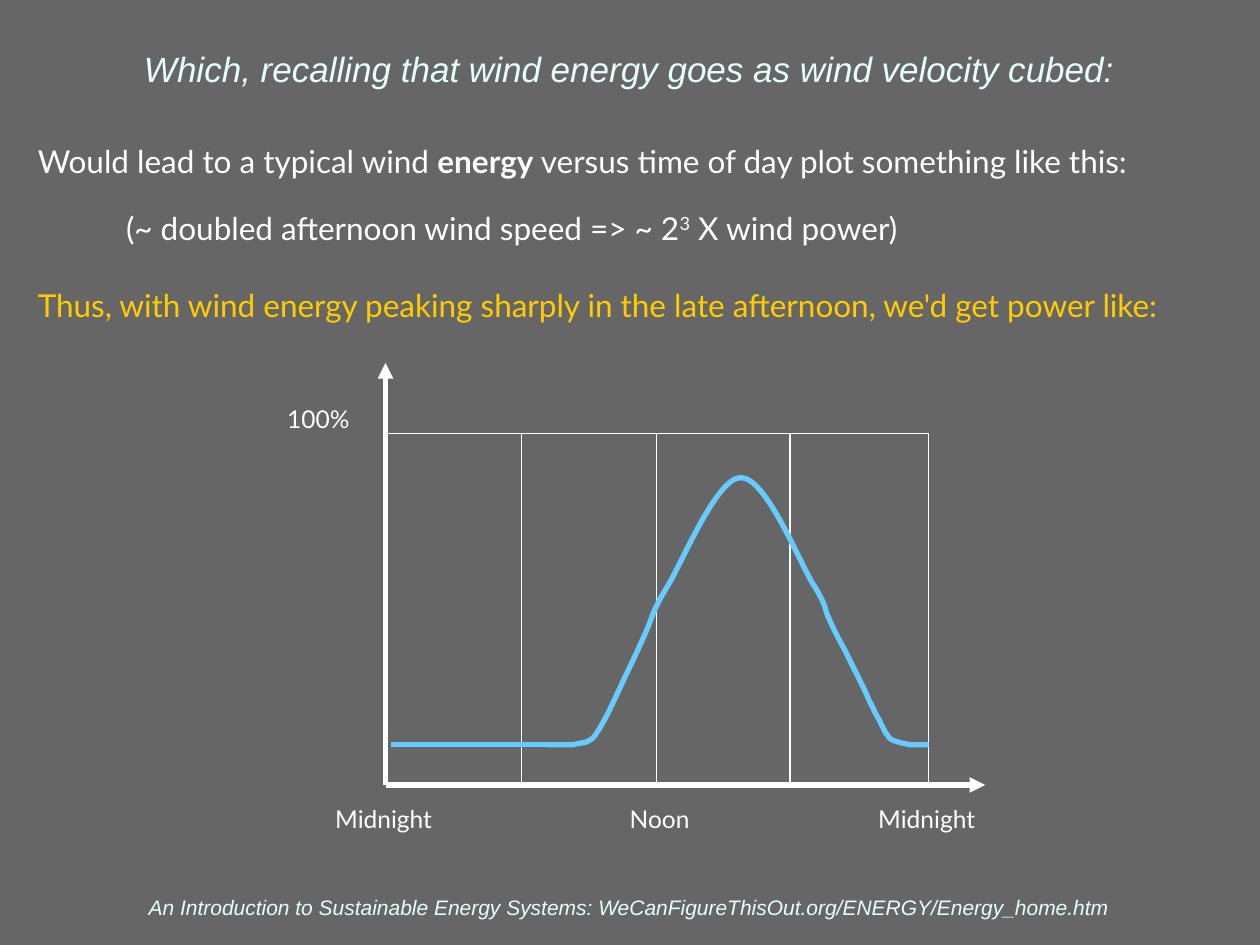
"""Build the slide that plots typical wind energy against time of day."""
from lxml import etree
from pptx import Presentation
from pptx.dml.color import RGBColor
from pptx.enum.shapes import MSO_CONNECTOR
from pptx.enum.text import MSO_ANCHOR, PP_ALIGN
from pptx.oxml.ns import qn
from pptx.util import Inches, Pt

LINE = MSO_CONNECTOR.STRAIGHT
LEFT, CENTER = PP_ALIGN.LEFT, PP_ALIGN.CENTER
TOP, MIDDLE, BOTTOM = MSO_ANCHOR.TOP, MSO_ANCHOR.MIDDLE, MSO_ANCHOR.BOTTOM

THEME = {
    "back": "666666", "pale": "E5FFFF", "white": "FFFFFF",
    "gold": "FFCC00", "blue": "66CCFF",
    "head": "Arial", "body": "Lato",
    "title": 20, "text": 18, "label": 14, "foot": 12,
    "thick": 3, "thin": 1,
}

TITLE = "Which, recalling that wind energy goes as wind velocity cubed:"
FOOT = ("An Introduction to Sustainable Energy Systems: "
        "WeCanFigureThisOut.org/ENERGY/Energy_home.htm")
BODY = [
    {"color": "white", "before": 0, "indent": 0, "runs": [
        ("Would lead to a typical wind ", ""), ("energy", "bold"),
        (" versus time of day plot something like this:", "")]},
    {"color": "white", "before": 16.4, "indent": 0.7, "runs": [
        ("(~ doubled afternoon wind speed => ~ 2", ""), ("3", "super"),
        (" X wind power)", "")]},
    {"color": "gold", "before": 22.4, "indent": 0, "runs": [
        ("Thus, with wind energy peaking sharply in the late afternoon, "
         "we'd get power like:", "")]},
]
LABELS = [
    ("100%", (2.23, 3.16, 0.9, 0.34), LEFT),
    (" Midnight", (2.43, 6.33, 1.18, 0.34), CENTER),
    (" Noon", (4.62, 6.33, 1.18, 0.34), CENTER),
    (" Midnight", (6.74, 6.33, 1.18, 0.34), CENTER),
]
PLOT = {"left": 3.06, "right": 7.37, "full": 3.44, "base": 6.23,
        "tip_x": 7.82, "tip_y": 2.88}
GRID = [4.14, 5.21, 6.27, 7.37]
CALM = (3.1, 5.91, 4.44, 5.91)
START, LEAD = (4.34, 5.91), (4.47, 5.91)
CURVE = [
    (4.51, 5.91, 4.52, 5.91, 4.55, 5.91),
    (4.58, 5.9, 4.61, 5.9, 4.65, 5.89), (4.68, 5.87, 4.7, 5.88, 4.74, 5.81),
    (4.79, 5.74, 4.86, 5.59, 4.92, 5.46), (4.98, 5.33, 5.06, 5.17, 5.12, 5.03),
    (5.18, 4.9, 5.17, 4.86, 5.3, 4.65), (5.42, 4.45, 5.69, 3.79, 5.88, 3.79),
    (6.08, 3.79, 6.34, 4.45, 6.45, 4.63), (6.57, 4.82, 6.54, 4.83, 6.58, 4.91),
    (6.62, 5, 6.65, 5.06, 6.7, 5.15), (6.74, 5.23, 6.8, 5.35, 6.84, 5.43),
    (6.88, 5.51, 6.9, 5.57, 6.93, 5.62), (6.95, 5.68, 6.98, 5.7, 6.99, 5.74),
    (7.01, 5.77, 7.02, 5.81, 7.04, 5.83), (7.06, 5.86, 7.07, 5.87, 7.1, 5.88),
    (7.13, 5.89, 7.17, 5.9, 7.22, 5.91), (7.27, 5.91, 7.37, 5.91, 7.37, 5.91),
]


def color(name):
    return RGBColor.from_string(THEME[name])


def set_frame(shape, anchor):
    frame = shape.text_frame
    frame.word_wrap = True
    frame.vertical_anchor = anchor
    frame.margin_left = frame.margin_right = Inches(0.05)
    frame.margin_top = frame.margin_bottom = Inches(0.05)
    return frame


def add_run(para, text, size, tint, face, style=""):
    run = para.add_run()
    run.text = text
    font = run.font
    font.name, font.size = THEME[face], Pt(THEME[size])
    font.color.rgb = color(tint)
    font.bold, font.italic = style == "bold", style == "italic"
    if style == "super":
        run._r.get_or_add_rPr().set("baseline", "30000")


def add_box(slide, box, anchor=TOP):
    shape = slide.shapes.add_textbox(*map(Inches, box))
    return set_frame(shape, anchor)


def add_line(slide, ends, width="thin", tint="white", arrow=False):
    line = slide.shapes.add_connector(LINE, *map(Inches, ends))
    line.line.color.rgb = color(tint)
    line.line.width = Pt(THEME[width])
    if arrow:
        etree.SubElement(line.line._get_or_add_ln(), qn("a:tailEnd"), type="triangle")
    etree.SubElement(line._element.spPr, qn("a:effectLst"))


def add_curve(slide):
    form = slide.shapes.build_freeform(*map(Inches, START))
    ends = [LEAD] + [bend[4:] for bend in CURVE]
    form.add_line_segments([tuple(map(Inches, end)) for end in ends], close=False)
    curve = form.convert_to_shape()
    lines = list(curve._element.iter(qn("a:lnTo")))
    for line, bend in zip(lines[1:], CURVE):
        line.tag = qn("a:cubicBezTo")
        line.clear()
        for x, y in zip(bend[::2], bend[1::2]):
            etree.SubElement(line, qn("a:pt"), x=str(Inches(x) - curve.left),
                             y=str(Inches(y) - curve.top))
    curve.shadow.inherit = False
    curve.fill.background()
    curve.line.color.rgb = color("blue")
    curve.line.width = Pt(THEME["thick"])


def add_text(slide):
    title = slide.shapes.title
    title.left, title.top, title.width, title.height = map(Inches, (0.33, 0.08, 9.33, 0.92))
    foot = add_box(slide, (0.33, 7.06, 9.33, 0.29), BOTTOM)
    for frame, text, size in ((set_frame(title, MIDDLE), TITLE, "title"), (foot, FOOT, "foot")):
        para = frame.paragraphs[0]
        para.alignment = CENTER
        add_run(para, text, size, "pale", "head", "italic")
    frame = add_box(slide, (0.25, 1.08, 9.75, 1.72))
    for i, item in enumerate(BODY):
        para = frame.add_paragraph() if i else frame.paragraphs[0]
        para.space_before = Pt(item["before"])
        para._p.get_or_add_pPr().set("marL", str(Inches(item["indent"])))
        for text, style in item["runs"]:
            add_run(para, text, "text", item["color"], "body", style)


def add_plot(slide):
    left, right, full, base = (PLOT[k] for k in ("left", "right", "full", "base"))
    add_line(slide, (left, base, PLOT["tip_x"], base), "thick", arrow=True)
    add_line(slide, (left, base, left, PLOT["tip_y"]), "thick", arrow=True)
    for x in GRID:
        add_line(slide, (x, base, x, full))
    add_line(slide, (left, full, right, full))
    for text, box, align in LABELS:
        para = add_box(slide, box).paragraphs[0]
        para.alignment = align
        add_run(para, text, "label", "white", "body")
    add_curve(slide)
    add_line(slide, CALM, "thick", "blue")


def main():
    deck = Presentation()
    deck.slide_width, deck.slide_height = Inches(10), Inches(7.5)
    slide = deck.slides.add_slide(deck.slide_layouts.get_by_name("Title Only"))
    slide.background.fill.solid()
    slide.background.fill.fore_color.rgb = color("back")
    add_text(slide)
    add_plot(slide)
    deck.save("out.pptx")


if __name__ == "__main__":
    main()
